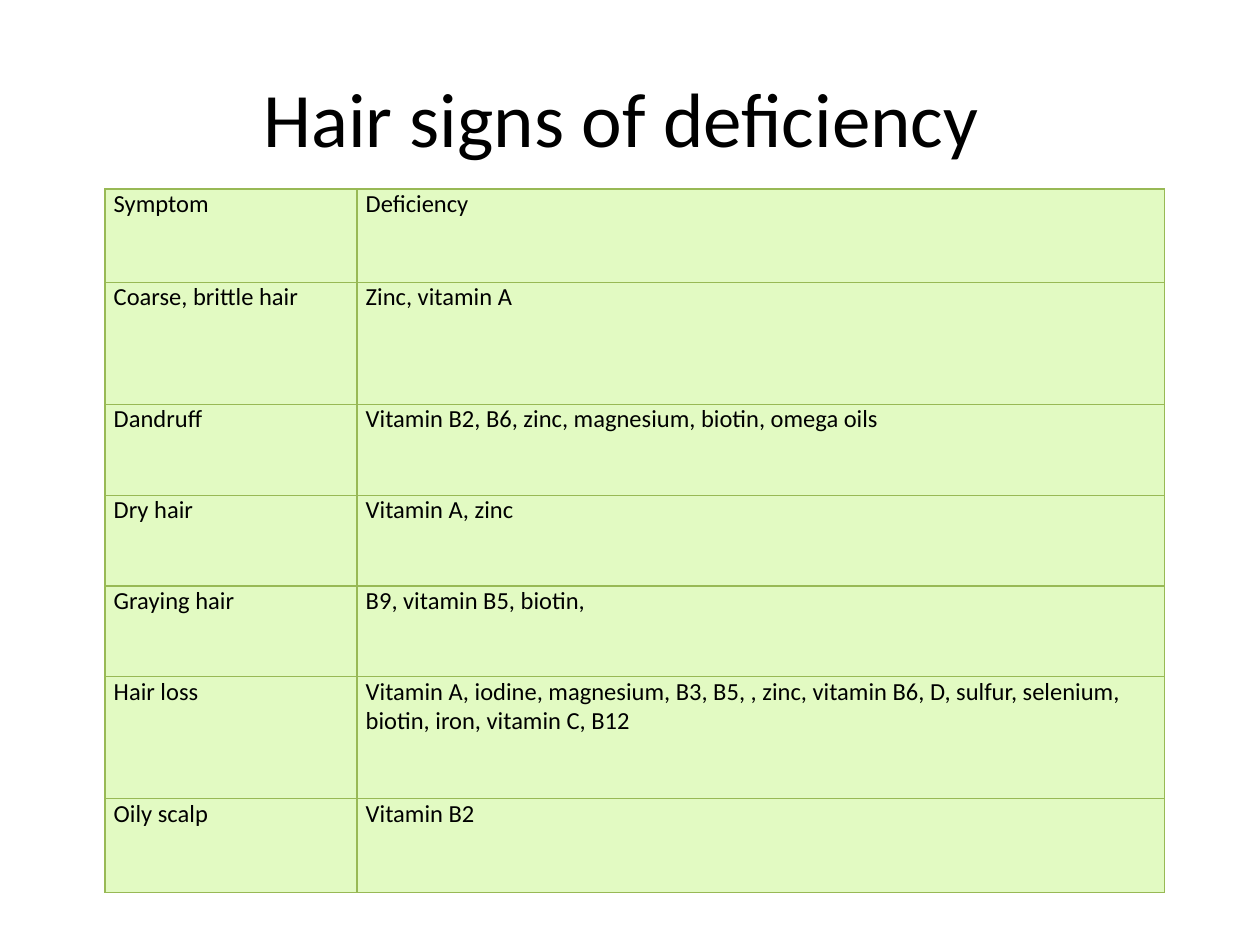
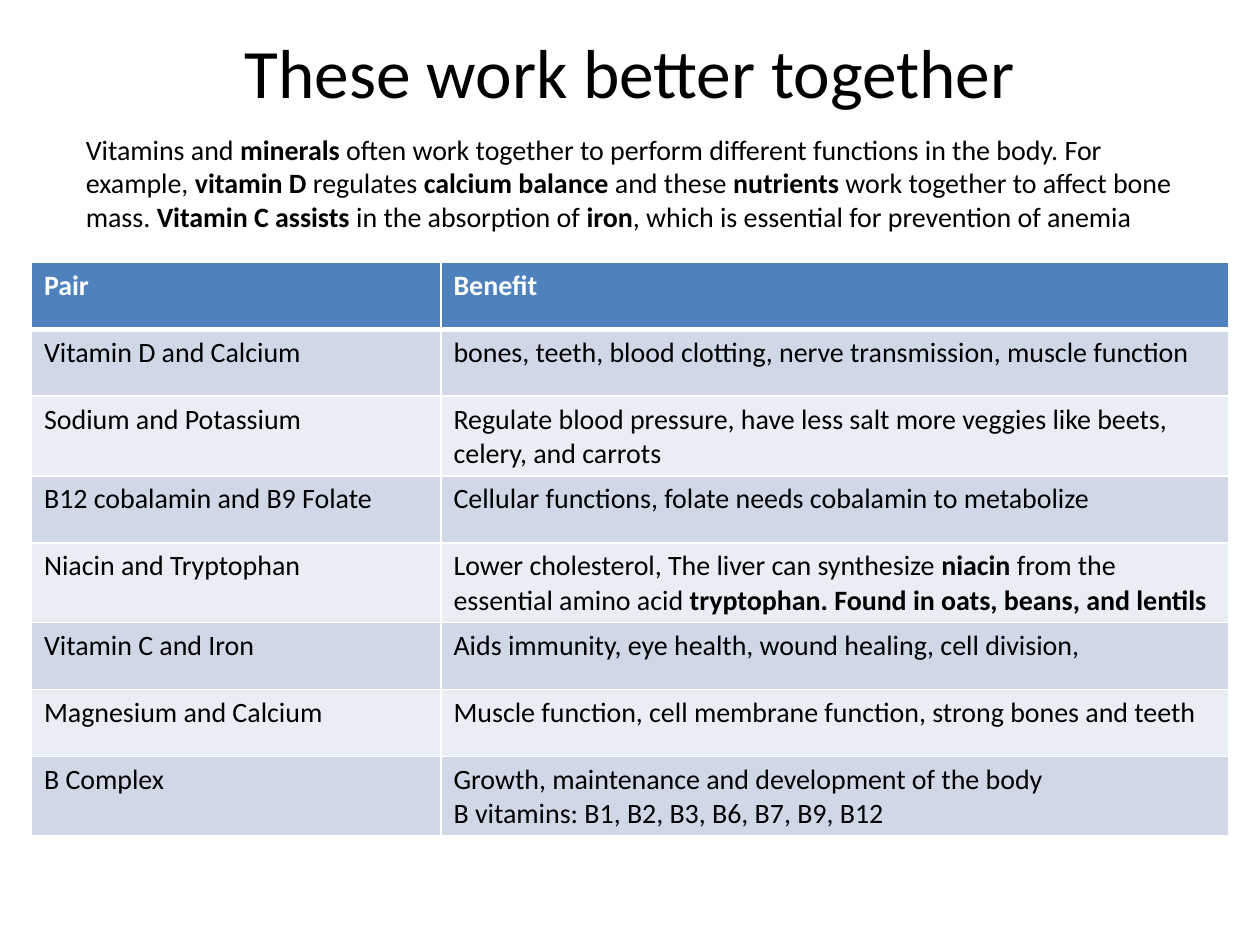
from dataclasses import dataclass

from lxml.etree import SubElement
from pptx import Presentation
from pptx.dml.color import RGBColor
from pptx.enum.text import MSO_ANCHOR, MSO_AUTO_SIZE, PP_ALIGN
from pptx.oxml.ns import qn
from pptx.util import Pt


@dataclass(frozen=True)
class Theme:
    """Hold the shared font, colours and type sizes."""
    font: str = "Calibri"
    ink: str = "000000"
    white: str = "FFFFFF"
    lime: str = "E2FAC2"
    olive: str = "98B955"
    blue: str = "4F81BD"
    bands: tuple = ("D0D8E8", "E9EDF4")
    large: float = 44
    title: float = 39.6
    body: float = 16
    small: float = 14


THEME = Theme()

SIGNS = [
    ("Symptom", "Deficiency"),
    ("Coarse, brittle hair", "Zinc, vitamin A"),
    ("Dandruff", "Vitamin B2, B6, zinc, magnesium, biotin, omega oils"),
    ("Dry hair", "Vitamin A, zinc"),
    ("Graying hair", "B9, vitamin B5, biotin,"),
    ("Hair loss", "Vitamin A, iodine, magnesium, B3, B5, , zinc, vitamin B6, D, "
     "sulfur, selenium, biotin, iron, vitamin C, B12"),
    ("Oily scalp", "Vitamin B2"),
]
INTRO = (
    "Vitamins and *minerals* often work together to perform different functions "
    "in the body. For example, *vitamin D* regulates *calcium balance* and these "
    "*nutrients* work together to affect bone mass. *Vitamin C assists* in the "
    "absorption of *iron*, which is essential for prevention of anemia"
)
PAIRS = [
    ("*Pair*", "*Benefit*"),
    ("Vitamin D and Calcium",
     "bones, teeth, blood clotting, nerve transmission, muscle function"),
    ("Sodium and Potassium", "Regulate blood pressure, have less salt more "
     "veggies like beets, celery, and carrots"),
    ("B12 cobalamin and B9 Folate",
     "Cellular functions, folate needs cobalamin to metabolize"),
    ("Niacin and Tryptophan", "Lower cholesterol, The liver can synthesize "
     "*niacin* from the essential amino acid "
     "*tryptophan. Found in oats, beans, and lentils*"),
    ("Vitamin C and Iron",
     "Aids immunity, eye health, wound healing, cell division,"),
    ("Magnesium and Calcium",
     "Muscle function, cell membrane function, strong bones and teeth"),
    ("B Complex", "Growth, maintenance and development of the body\n"
     "B vitamins: B1, B2, B3, B6, B7, B9, B12"),
]


def write(frame, text, size, ink=THEME.ink):
    """Fill a text frame, setting the parts between asterisks in bold."""
    frame.text = text
    for para in frame.paragraphs:
        parts = para.text.split("*")
        para.text = ""
        for i, part in enumerate(parts):
            if part:
                run = para.add_run()
                run.text = part
                run.font.name = THEME.font
                run.font.size = Pt(size)
                run.font.bold = i % 2 == 1
                run.font.color.rgb = RGBColor.from_string(ink)


def place(shape, box):
    """Move and size a shape in points."""
    shape.left, shape.top, shape.width, shape.height = map(Pt, box)


def add_page(deck, title, box, size):
    """Add a slide with a centred title."""
    page = deck.slides.add_slide(deck.slide_layouts[5])
    head = page.shapes.title
    place(head, box)
    frame = head.text_frame
    write(frame, title, size)
    frame.auto_size = MSO_AUTO_SIZE.NONE
    frame.vertical_anchor = MSO_ANCHOR.MIDDLE
    frame.paragraphs[0].alignment = PP_ALIGN.CENTER
    return page


def add_note(page, text, box):
    """Add a wrapped text box."""
    note = page.shapes.add_textbox(*map(Pt, box))
    note.text_frame.word_wrap = True
    write(note.text_frame, text, THEME.body)


def edge(cell, side, width, colour):
    """Draw one border of a cell."""
    line = SubElement(cell._tc.get_or_add_tcPr(), qn("a:ln" + side), w=str(Pt(width)))
    fill = SubElement(line, qn("a:solidFill"))
    SubElement(fill, qn("a:srgbClr"), val=colour)


def paint(cell, colour, line, widths):
    """Give a cell its borders and then its fill."""
    for side, width in zip("LRTB", widths):
        edge(cell, side, width, line)
    cell.fill.solid()
    cell.fill.fore_color.rgb = RGBColor.from_string(colour)


def add_grid(page, data, left, top, cols, rows):
    """Add an unbanded table with the given column and row sizes."""
    box = map(Pt, (left, top, sum(cols), sum(rows)))
    grid = page.shapes.add_table(len(rows), len(cols), *box).table
    grid.first_row = grid.horz_banding = False
    for col, width in zip(grid.columns, cols):
        col.width = Pt(width)
    for row, height in zip(grid.rows, rows):
        row.height = Pt(height)
    return [(r, grid.cell(r, c), text)
            for r, line in enumerate(data) for c, text in enumerate(line)]


def add_signs(page):
    """Add the green table of hair signs."""
    rows = [53.3, 69.8] + [51.9] * 3 + [69.8, 53.3]
    for _, cell, text in add_grid(page, SIGNS, 60, 108, [144, 461.5], rows):
        cell.margin_left = cell.margin_right = Pt(5)
        cell.margin_top = cell.margin_bottom = 0
        write(cell.text_frame, text, THEME.small)
        paint(cell, THEME.lime, THEME.olive, [0.75] * 4)


def add_pairs(page):
    """Add the blue banded table of pairs."""
    rows = [38.2] * len(PAIRS)
    for r, cell, text in add_grid(page, PAIRS, 18, 150, [234, 450], rows):
        head = r == 0
        write(cell.text_frame, text, THEME.body, THEME.white if head else THEME.ink)
        paint(cell, THEME.blue if head else THEME.bands[(r - 1) % 2], THEME.white,
              [1, 1, 3 if r == 1 else 1, 3 if head else 1])


def main():
    """Build both slides and save the deck."""
    deck = Presentation()
    deck.slide_width, deck.slide_height = Pt(720), Pt(540)
    page = add_page(deck, "Hair signs of deficiency ", (36, 21.6, 648, 90), THEME.large)
    add_signs(page)
    page = add_page(deck, "These work better together", (36, 12.5, 648, 56), THEME.title)
    add_note(page, INTRO, (42, 72, 648, 65.5))
    add_pairs(page)
    deck.save("out.pptx")


if __name__ == "__main__":
    main()
